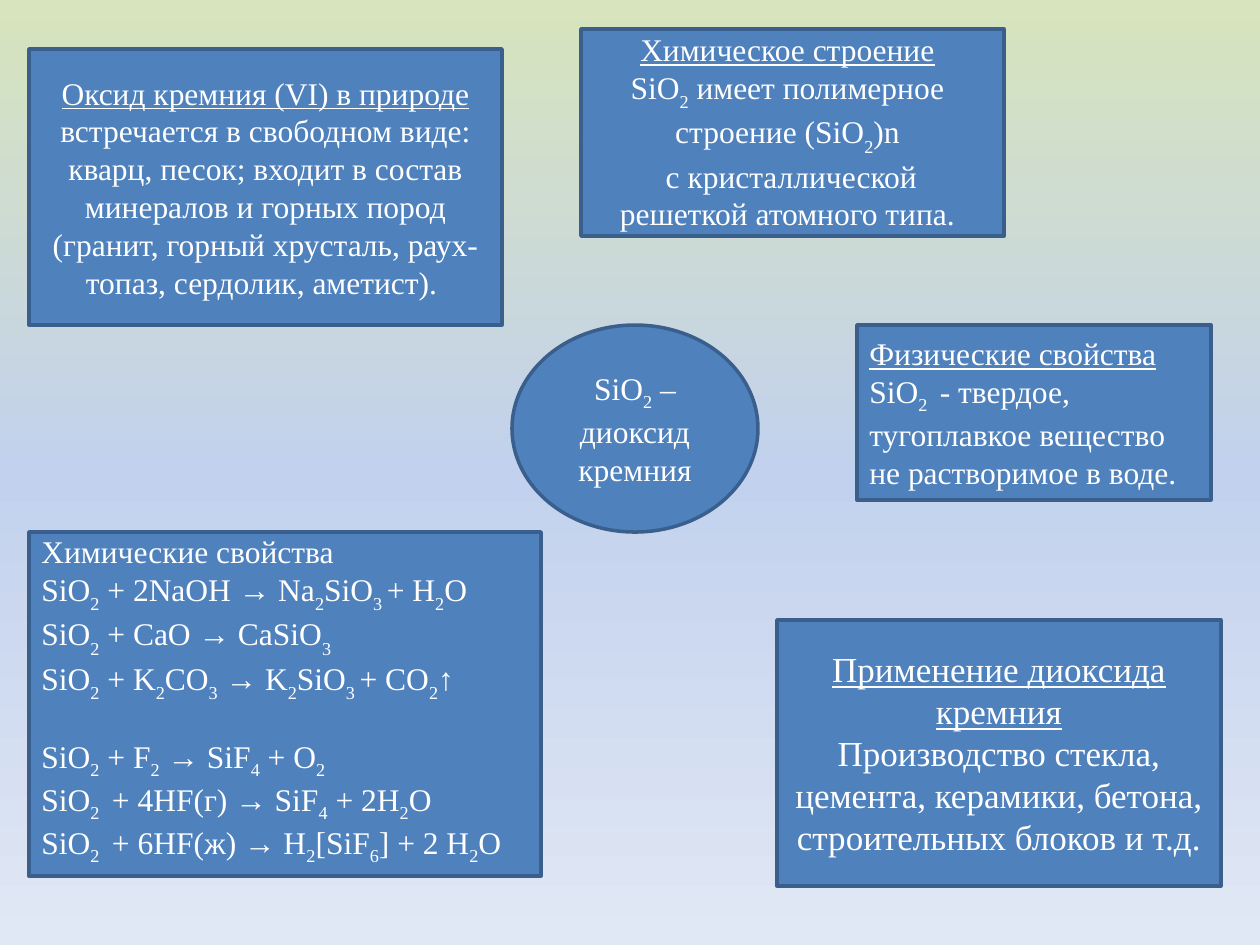
from copy import deepcopy
from pptx import Presentation
from pptx.dml.color import RGBColor
from pptx.enum.shapes import MSO_SHAPE
from pptx.enum.text import MSO_ANCHOR, PP_ALIGN
from pptx.oxml.ns import qn
from pptx.util import Pt

RECT, OVAL = MSO_SHAPE.RECTANGLE, MSO_SHAPE.OVAL
TOP, MID, LOW = MSO_ANCHOR.TOP, MSO_ANCHOR.MIDDLE, MSO_ANCHOR.BOTTOM
LEFT, MIDST = PP_ALIGN.LEFT, PP_ALIGN.CENTER

BLUE = RGBColor(0x4F, 0x81, 0xBD)
EDGE = RGBColor(0x3A, 0x5F, 0x8C)
WHITE = RGBColor(0xFF, 0xFF, 0xFF)
SKY = [
    (0, RGBColor(0xD7, 0xE4, 0xBD)),
    (0.5, RGBColor(0xC2, 0xD1, 0xED)),
    (1, RGBColor(0xE1, 0xE8, 0xF5)),
]
FONT = "Times New Roman"
SCALE = 914400 / 126

# Markup: *underlined*, _subscript_
CENTER = ["SiO_2_ – диоксид кремния"]
NATURE = [
    "*Оксид кремния (VI) в природе *встречается в свободном виде: кварц, "
    "песок; входит в состав минералов и горных пород (гранит, горный "
    "хрусталь, раух-топаз, сердолик, аметист). "
]
BUILD = [
    "*Химическое строение*",
    "SiO_2_ имеет полимерное строение (SiO_2_)n",
    " с кристаллической решеткой атомного типа.",
]
ACIDS = [
    "SiO_2_ + F_2_ → SiF_4_ + O_2_",
    "SiO_2 _ + 4HF(г) → SiF_4_ + 2H_2_O",
    "SiO_2 _ + 6HF(ж) → H_2_[SiF_6_] + 2 H_2_O",
]
BASES = [
    "Химические свойства",
    "SiO_2_ + 2NaOH → Na_2_SiO_3 _+ H_2_O",
    "SiO_2_ + CaO → CaSiO_3_",
    "SiO_2_ + K_2_CO_3_ → K_2_SiO_3 _+ CO_2_↑",
]
TRAITS = [
    "*Физические свойства*",
    "SiO_2 _ - твердое, тугоплавкое вещество",
    "не растворимое в воде.",
]
USES = [
    "*Применение диоксида кремния*",
    "Производство стекла, цемента, керамики, бетона, строительных блоков и т.д.",
]

# kind (None is a text box), box, text, align, anchor, size, subscript, inset
PARTS = [
    (OVAL, (512, 325, 246, 207), CENTER, MIDST, MID, 18, -25, 6),
    (RECT, (29, 49, 473, 276), NATURE, MIDST, MID, 18, -25, 6),
    (RECT, (581, 29, 423, 207), [], MIDST, MID, 18, -30, 6),
    (None, (581, 29, 413, 204), BUILD, MIDST, MID, 18, -30, 6),
    (RECT, (29, 532, 512, 344), ACIDS, LEFT, LOW, 18, -25, 10),
    (None, (29, 532, 473, 204), BASES, LEFT, TOP, 18, -30, 0),
    (RECT, (857, 325, 354, 175), TRAITS, LEFT, MID, 18, -25, 6),
    (RECT, (777, 620, 444, 266), USES, MIDST, MID, 20, -25, 6),
]


def px(n):
    return round(n * SCALE)


def write(para, text, size, drop):
    for i, part in enumerate(text.split("*")):
        for j, piece in enumerate(part.split("_")):
            if not piece:
                continue
            run = para.add_run()
            run.text = piece
            font = run.font
            font.name, font.size = FONT, Pt(size)
            font.color.rgb = WHITE
            if i % 2:
                font.underline = True
            if j % 2:
                run._r.get_or_add_rPr().set("baseline", str(drop * 1000))


def place(slide, kind, box, lines, align, anchor, size, drop, inset):
    spot = [px(n) for n in box]
    if kind is None:
        shape = slide.shapes.add_textbox(*spot)
    else:
        shape = slide.shapes.add_shape(kind, *spot)
        shape.shadow.inherit = False
        shape.fill.solid()
        shape.fill.fore_color.rgb = BLUE
        shape.line.color.rgb = EDGE
        shape.line.width = Pt(2)
    frame = shape.text_frame
    frame.word_wrap = True
    frame.vertical_anchor = anchor
    frame.margin_top = frame.margin_bottom = px(inset)
    for i, line in enumerate(lines):
        para = frame.add_paragraph() if i else frame.paragraphs[0]
        para.alignment = align
        write(para, line, size, drop)


def paint(slide):
    fill = slide.background.fill
    fill.gradient()
    fill.gradient_angle = 270
    stops = slide._element.find(".//" + qn("a:gsLst"))
    stops.insert(1, deepcopy(stops[0]))
    for stop, (pos, color) in zip(fill.gradient_stops, SKY):
        stop.position = pos
        stop.color.rgb = color


def main():
    deck = Presentation()
    deck.slide_width, deck.slide_height = px(1260), px(945)
    slide = deck.slides.add_slide(deck.slide_layouts[6])
    paint(slide)
    for part in PARTS:
        place(slide, *part)
    deck.save("out.pptx")


if __name__ == "__main__":
    main()
